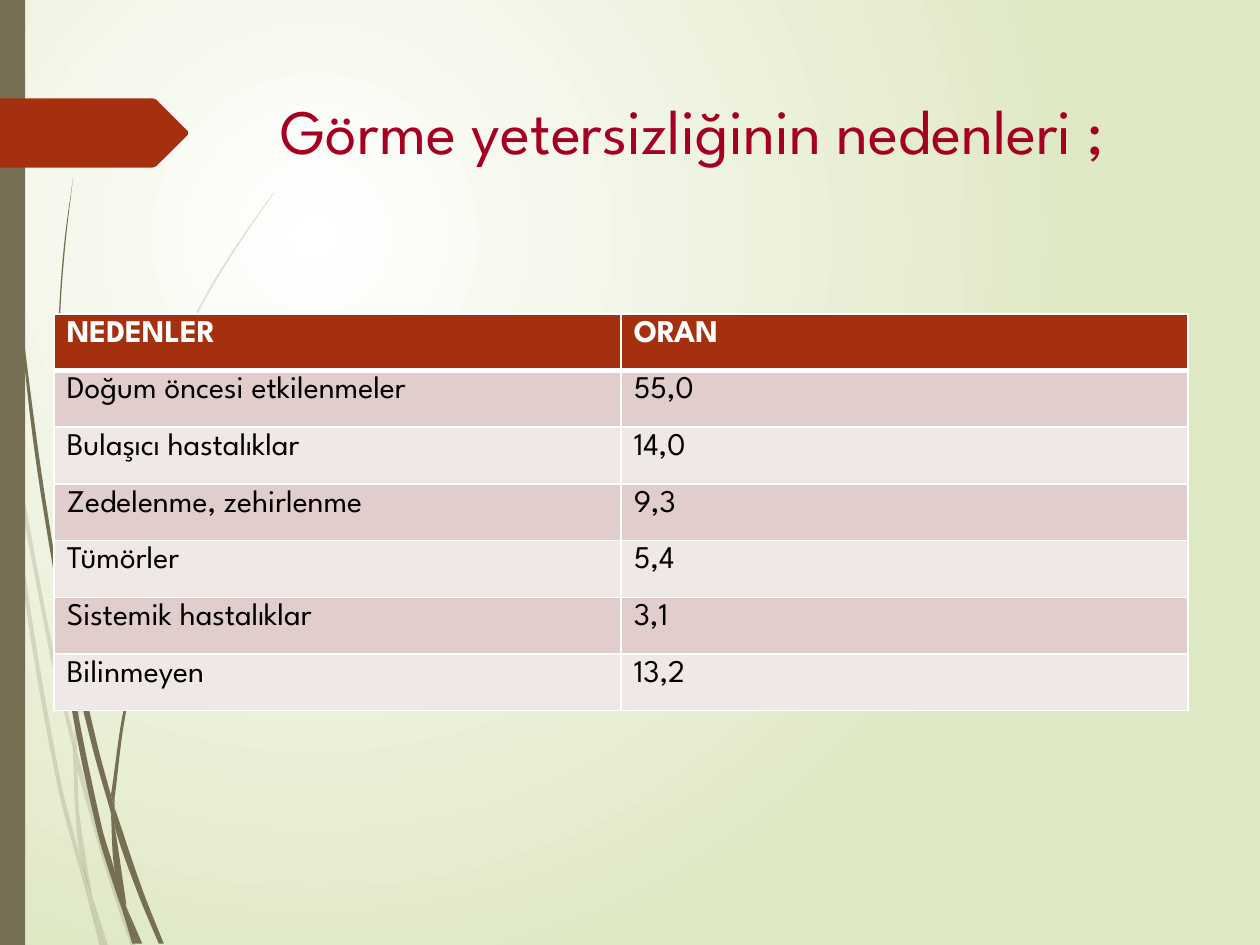
from math import dist
from pptx import Presentation
from pptx.dml.color import RGBColor
from pptx.enum.shapes import MSO_SHAPE as Shape
from pptx.oxml import parse_xml
from pptx.oxml.ns import nsdecls, qn
from pptx.util import Inches, Pt
from lxml.etree import SubElement

WIDTH, HEIGHT = 10, 7.5
FONT = "League Spartan"
WHITE = RGBColor(0xFF, 0xFF, 0xFF)
BLACK = RGBColor(0, 0, 0)
PALE_GREEN = RGBColor(0xDF, 0xE8, 0xC4)
OLIVE = RGBColor(0x76, 0x6F, 0x54)
RUST = RGBColor(0xA5, 0x30, 0x10)
CRIMSON = RGBColor(0xA5, 0x00, 0x21)
BANDS = RGBColor(0xE1, 0xCD, 0xCC), RGBColor(0xF0, 0xE8, 0xE7)

TITLE = "Görme yetersizliğinin nedenleri ;"
ROWS = [
    ("NEDENLER", "ORAN"),
    ("Doğum öncesi etkilenmeler", "55,0"),
    ("Bulaşıcı hastalıklar", "14,0"),
    ("Zedelenme, zehirlenme", "9,3"),
    ("Tümörler", "5,4"),
    ("Sistemik hastalıklar", "3,1"),
    ("Bilinmeyen", "13,2"),
]

# Each grass blade is a few curved edges, together running once around it.
FAINT_BLADES = [
    ([(0.08, 3.5), (0.06, 3.22), (0, 2.82)], [(0, 2.99), (0.07, 3.44), (0.08, 3.5)]),
    ([(0.4, 5.22), (0.59, 5.99)], [(0.59, 5.86), (0.43, 5.2), (0.1, 3.45)],
     [(0.12, 3.76), (0.4, 5.22)]),
    ([(1.04, 7.51), (0.85, 6.94), (0.61, 6.1)], [(0.61, 5.96), (0.64, 6.07), (0.88, 6.92), (1.08, 7.51)]),
    ([(0.83, 7.51), (0.73, 7.11)], [(0.73, 7.11), (0.86, 7.51)]),
    ([(0.7, 7.14), (0.64, 6.83), (0.48, 6.19), (0.22, 4.69), (0.12, 3.76), (0.08, 3.5)],
     [(0.08, 3.5), (0.19, 4.7), (0.45, 6.21), (0.64, 6.93), (0.7, 7.14)]),
    ([(0.58, 5.99), (0.6, 6.46), (0.64, 6.83), (0.73, 7.11)],
     [(0.73, 7.11), (0.63, 6.46), (0.61, 6.1), (0.58, 5.99)]),
    ([(0.61, 5.96), (0.61, 5.84), (0.76, 4.62), (1.11, 3.49), (1.59, 2.45), (1.87, 1.98), (2.17, 1.54)],
     [(2.17, 1.53), (1.86, 1.97), (1.58, 2.44), (1.1, 3.48), (0.75, 4.61), (0.59, 5.84)]),
    ([(0.7, 7.14), (0.79, 7.51)], [(0.82, 7.51), (0.7, 7.14)]),
    ([(0.61, 6.1), (0.61, 5.96), (0.59, 5.86)], [(0.58, 5.99), (0.61, 6.08)]),
    ([(0.65, 6.83), (0.7, 7.14), (0.82, 7.51)], [(0.83, 7.51), (0.73, 7.11), (0.65, 6.83)]),
]
DARK_BLADES = [
    ([(0.02, 0), (0.05, 1.1), (0.14, 2.33), (0.27, 3.55), (0.47, 4.81)],
     [(0.45, 4.53), (0.3, 3.55), (0.15, 2.32), (0.06, 1.09), (0.03, 0)]),
    ([(0.5, 4.72), (0.53, 5.05), (0.73, 5.92), (0.88, 6.45)],
     [(0.88, 6.31), (0.77, 5.9), (0.5, 4.72)]),
    ([(0.91, 6.41), (0.91, 6.56), (1.09, 7.08), (1.26, 7.49)],
     [(1.3, 7.49), (1.13, 7.06), (0.91, 6.41)]),
    ([(0.97, 7.22), (0.91, 6.91), (0.81, 6.57), (0.6, 5.56), (0.53, 5.05), (0.47, 4.77)],
     [(0.47, 4.77), (0.56, 5.57), (0.77, 6.59), (0.92, 7.08), (0.97, 7.22)]),
    ([(0.5, 4.72), (0.48, 4.53), (0.44, 3.49), (0.48, 2.45), (0.52, 1.93), (0.58, 1.41)],
     [(0.58, 1.41), (0.51, 1.93), (0.47, 2.45), (0.43, 3.49), (0.45, 4.49), (0.49, 4.72)]),
    ([(1, 7.19), (1.1, 7.49)], [(1.13, 7.49), (1, 7.19)]),
    ([(0.45, 4.49), (0.47, 4.77), (0.53, 5.05)], [(0.5, 4.72), (0.45, 4.49)]),
    ([(0.91, 6.41), (0.91, 6.33), (1.03, 5.52), (1.31, 4.76), (1.69, 4.06), (1.91, 3.74), (2.16, 3.44)],
     [(2.15, 3.44), (1.91, 3.73), (1.68, 4.05), (1.29, 4.74), (1.01, 5.51), (0.88, 6.31)]),
    ([(0.97, 7.22), (1.05, 7.49)], [(1.08, 7.49), (0.97, 7.22)]),
    ([(0.88, 6.45), (0.91, 6.91), (1, 7.19)], [(1, 7.16), (0.91, 6.56), (0.88, 6.45)]),
    ([(0.88, 6.45), (0.91, 6.56)], [(0.91, 6.41), (0.88, 6.31)]),
    ([(0.91, 6.91), (0.97, 7.22), (1.08, 7.49)], [(1.1, 7.49), (1, 7.19), (0.91, 6.91)]),
]
ARROW = [(0, 0.78), (1.21, 0.78), (1.24, 0.79), (1.49, 1.04),
         (1.49, 1.07), (1.24, 1.32), (1.21, 1.33), (0, 1.33)]


def paint(shape, color, alpha=None):
    shape.shadow.inherit = False
    shape.line.fill.background()
    shape.fill.solid()
    shape.fill.fore_color.rgb = color
    if alpha is not None:
        color_element = shape._element.spPr.find(qn("a:solidFill"))[0]
        SubElement(color_element, qn("a:alpha"), val=str(alpha * 1000))


def add_outline(slide, points, color, alpha=None):
    corners = [(Inches(x), Inches(y)) for x, y in points]
    builder = slide.shapes.build_freeform(*corners[0])
    builder.add_line_segments(corners[1:], close=True)
    shape = builder.convert_to_shape()
    paint(shape, color, alpha)
    return shape


def handle(start, end, before, after):
    """Bezier handle at start, along the direction from before to after."""
    reach = dist(start, end) / 3 / dist(before, after)
    return tuple(s + reach * (a - b) for s, a, b in zip(start, after, before))


def add_blade(slide, edges, alpha):
    shape = add_outline(slide, [point for edge in edges for point in edge], OLIVE, alpha)
    lines = iter(list(shape._element.iter(qn("a:lnTo"))))
    for index, edge in enumerate(edges):
        if index:
            next(lines)  # the straight step between two edges
        padded = [edge[0], *edge, edge[-1]]
        for a, b, c, d in zip(padded, padded[1:], padded[2:], padded[3:]):
            line = next(lines)
            line.tag = qn("a:cubicBezTo")
            for position, (x, y) in enumerate((handle(b, c, a, c), handle(c, b, d, b))):
                line.insert(position, line.makeelement(
                    qn("a:pt"), x=str(Inches(x) - shape.left), y=str(Inches(y) - shape.top)))


def write(text_frame, text, size=18, color=BLACK, bold=False):
    run = text_frame.paragraphs[0].add_run()
    run.text = text
    run.font.name, run.font.size = FONT, Pt(size)
    run.font.bold, run.font.color.rgb = bold, color
    run.font._element.set("kern", "1200")


def set_borders(cell, **widths):
    properties = cell._tc.get_or_add_tcPr()
    for index, side in enumerate("LRTB"):
        width = Pt(widths.get(side, 1))
        properties.insert(index, parse_xml(
            f'<a:ln{side} {nsdecls("a")} w="{width}"><a:solidFill>'
            f'<a:srgbClr val="{WHITE}"/></a:solidFill></a:ln{side}>'))


def set_background(slide):
    fill = slide.background.fill
    fill.gradient()
    for stop, color in zip(fill.gradient_stops, (WHITE, PALE_GREEN)):
        stop.color.rgb = color
    gradient = slide._element.cSld.find(".//" + qn("a:gradFill"))
    gradient.replace(gradient.find(qn("a:lin")), parse_xml(
        f'<a:path {nsdecls("a")} path="circle">'
        '<a:fillToRect l="50000" t="50000" r="100000" b="100000"/></a:path>'))


def add_causes_table(slide):
    row_height = 0.45
    table = slide.shapes.add_table(
        len(ROWS), len(ROWS[0]), Inches(0.43), Inches(2.49),
        Inches(9), Inches(row_height * len(ROWS))).table
    for row_index, row in enumerate(ROWS):
        header = row_index == 0
        for column_index, text in enumerate(row):
            cell = table.cell(row_index, column_index)
            cell.fill.solid()
            cell.fill.fore_color.rgb = RUST if header else BANDS[(row_index - 1) % 2]
            write(cell.text_frame, text, color=WHITE if header else BLACK, bold=header)
            set_borders(cell, B=3 if header else 1, T=3 if row_index == 1 else 1)


def main():
    presentation = Presentation()
    presentation.slide_width, presentation.slide_height = Inches(WIDTH), Inches(HEIGHT)
    slide = presentation.slides.add_slide(presentation.slide_layouts[6])
    set_background(slide)
    for blades, alpha in ((FAINT_BLADES, 20), (DARK_BLADES, None)):
        for edges in blades:
            add_blade(slide, edges, alpha)
    paint(slide.shapes.add_shape(Shape.RECTANGLE, 0, 0, Inches(0.2), Inches(HEIGHT)), OLIVE)
    add_outline(slide, ARROW, RUST)
    title = slide.shapes.add_textbox(Inches(2.13), Inches(0.68), Inches(7.21), Inches(1.4))
    title.text_frame.word_wrap = True
    write(title.text_frame, TITLE, size=36, color=CRIMSON)
    add_causes_table(slide)
    presentation.save("out.pptx")


if __name__ == "__main__":
    main()
